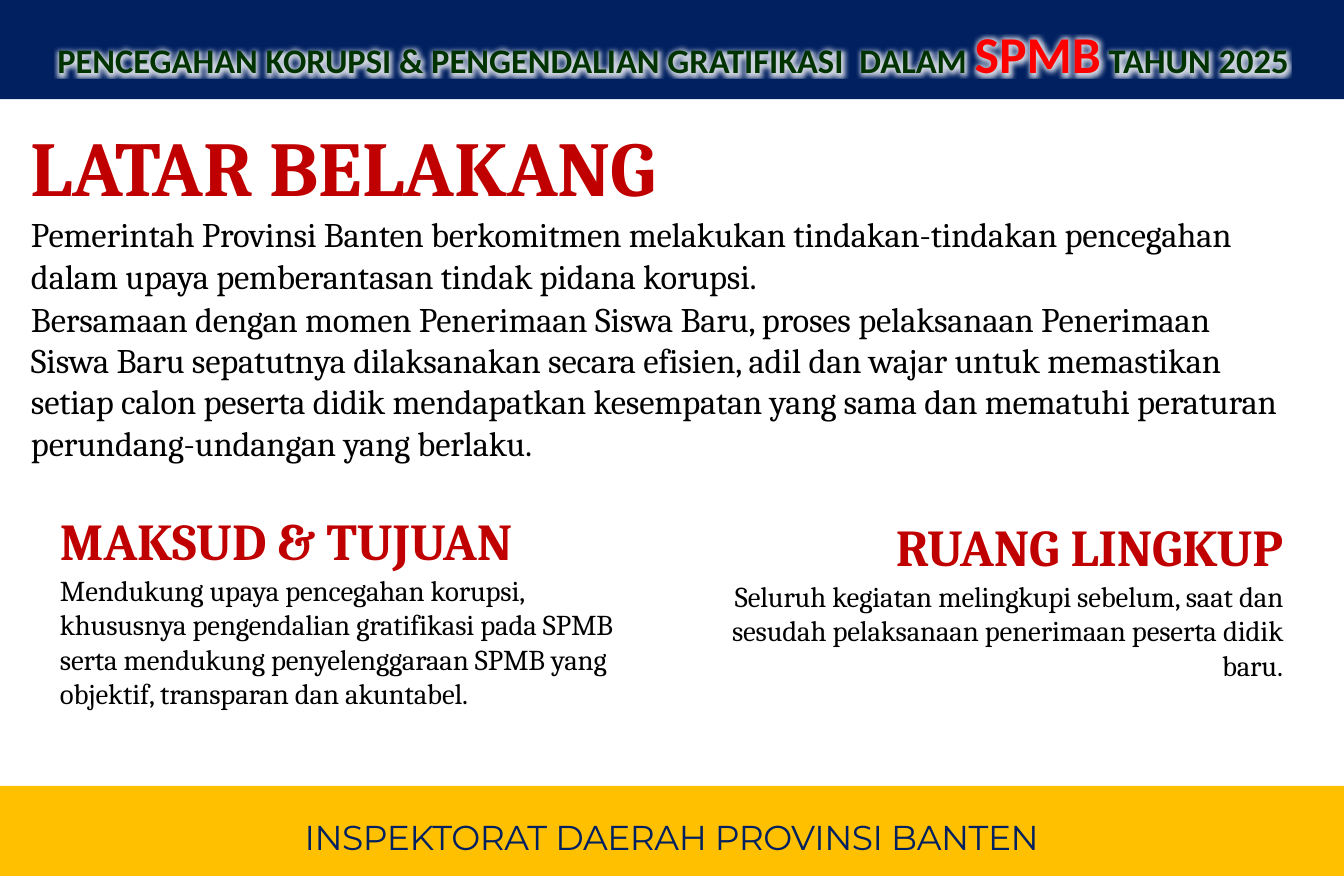
from lxml import etree
from pptx import Presentation
from pptx import util as u
from pptx.dml.color import RGBColor
from pptx.enum import shapes, text
from pptx.oxml.ns import qn

COLORS = dict(navy="002060", gold="FFC000", red="C00000", green="003300",
              bright="FF0000", black="000000", white="FFFFFF")
PX = 9144  # EMU per px, 100 px to the inch
LEFT, CENTER, RIGHT = (text.PP_ALIGN.LEFT, text.PP_ALIGN.CENTER,
                       text.PP_ALIGN.RIGHT)

# Content
BARS = [((0, -4, 1300, 100), "navy"), ((-1, 760, 1300, 87), "gold")]
HEADER = [
    ("PENCEGAHAN KORUPSI & PENGENDALIAN GRATIFIKASI", 24, "green", 0),
    (" ", 24, "green", 5.4),
    ("DALAM ", 24, "green", 0),
    ("SPMB", 36, "bright", 0),
    (" TAHUN 2025", 24, "green", 0),
]
FOOTER = "INSPEKTORAT DAERAH PROVINSI BANTEN"
SECTIONS = [  # box, alignment, heading size, body size, heading, body
    ((30, 113, 1213, 337), LEFT, 54, 24, "LATAR BELAKANG", [
        "Pemerintah Provinsi Banten berkomitmen melakukan tindakan-tindakan "
        "pencegahan dalam upaya pemberantasan tindak pidana korupsi.",
        "Bersamaan dengan momen Penerimaan Siswa Baru, proses pelaksanaan "
        "Penerimaan Siswa Baru sepatutnya dilaksanakan secara efisien, adil "
        "dan wajar untuk memastikan setiap calon peserta didik mendapatkan "
        "kesempatan yang sama dan mematuhi peraturan perundang-undangan "
        "yang berlaku."]),
    ((58, 490, 576, 198), LEFT, 36, 20, "MAKSUD & TUJUAN", [
        "Mendukung upaya pencegahan korupsi, khususnya pengendalian "
        "gratifikasi pada SPMB serta mendukung penyelenggaraan SPMB yang "
        "objektif, transparan dan akuntabel."]),
    ((697, 496, 543, 164), RIGHT, 36, 20, "RUANG LINGKUP", [
        "Seluruh kegiatan melingkupi sebelum, saat dan sesudah pelaksanaan "
        "penerimaan peserta didik baru."]),
]

prs = Presentation()
prs.slide_width, prs.slide_height = 1299 * PX, 847 * PX
s = prs.slides.add_slide(prs.slide_layouts[5])


def emu(box):
    return [v * PX for v in box]


def add_run(p, content, *, size, color, font="Cambria", bold=False,
            spacing=0.0, glow=False):
    r = p.add_run()
    r.text = content
    f = r.font
    f.size, f.name, f.bold = u.Pt(size), font, bold
    f.color.rgb = RGBColor.from_string(COLORS[color])
    rpr = f._element
    if spacing:
        rpr.set("spc", str(round(spacing * 100)))
    if glow:
        effects = etree.Element(qn("a:effectLst"))
        halo = etree.SubElement(effects, qn("a:glow"), rad=str(u.Pt(8)))
        tint = etree.SubElement(halo, qn("a:srgbClr"), val=COLORS["white"])
        etree.SubElement(tint, qn("a:alpha"), val="80000")
        rpr.find(qn("a:solidFill")).addnext(effects)


def add_box(box):
    tf = s.shapes.add_textbox(*emu(box)).text_frame
    tf.word_wrap = True
    tf.margin_left = tf.margin_right = tf.margin_bottom = 0
    tf.margin_top = 2 * PX
    return tf


# Header and footer bars
for box, color in BARS:
    sp = s.shapes.add_shape(shapes.MSO_SHAPE.RECTANGLE, *emu(box))
    sp.shadow.inherit = False
    sp.fill.solid()
    sp.fill.fore_color.rgb = RGBColor.from_string(COLORS[color])
    sp.line.fill.background()

# Footer text
p = add_box((58, 787, 1182, 42)).paragraphs[0]
p.alignment = CENTER
add_run(p, FOOTER, size=24, color="navy", font="Montserrat", spacing=-0.3)

# Sections
for box, align, head_size, body_size, heading, body in SECTIONS:
    tf = add_box(box)
    p = tf.paragraphs[0]
    p.alignment = align
    add_run(p, heading, size=head_size, color="red", bold=True, spacing=-0.1)
    for line in body:
        p = tf.add_paragraph()
        p.alignment, p.space_before = align, u.Pt(1)
        add_run(p, line, size=body_size, color="black", spacing=-0.1)

# Title, brought in front of the header bar
title = s.shapes.title
title.left, title.top, title.width, title.height = emu((1, 16, 1299, 71))
s.shapes._spTree.append(title._element)
tf = title.text_frame
tf.word_wrap, tf.auto_size = True, text.MSO_AUTO_SIZE.NONE
tf.vertical_anchor = text.MSO_ANCHOR.TOP
p = tf.paragraphs[0]
p.alignment = CENTER
for content, size, color, spacing in HEADER:
    add_run(p, content, size=size, color=color, font="Calibri", bold=True,
            spacing=spacing, glow=True)

prs.save("out.pptx")
